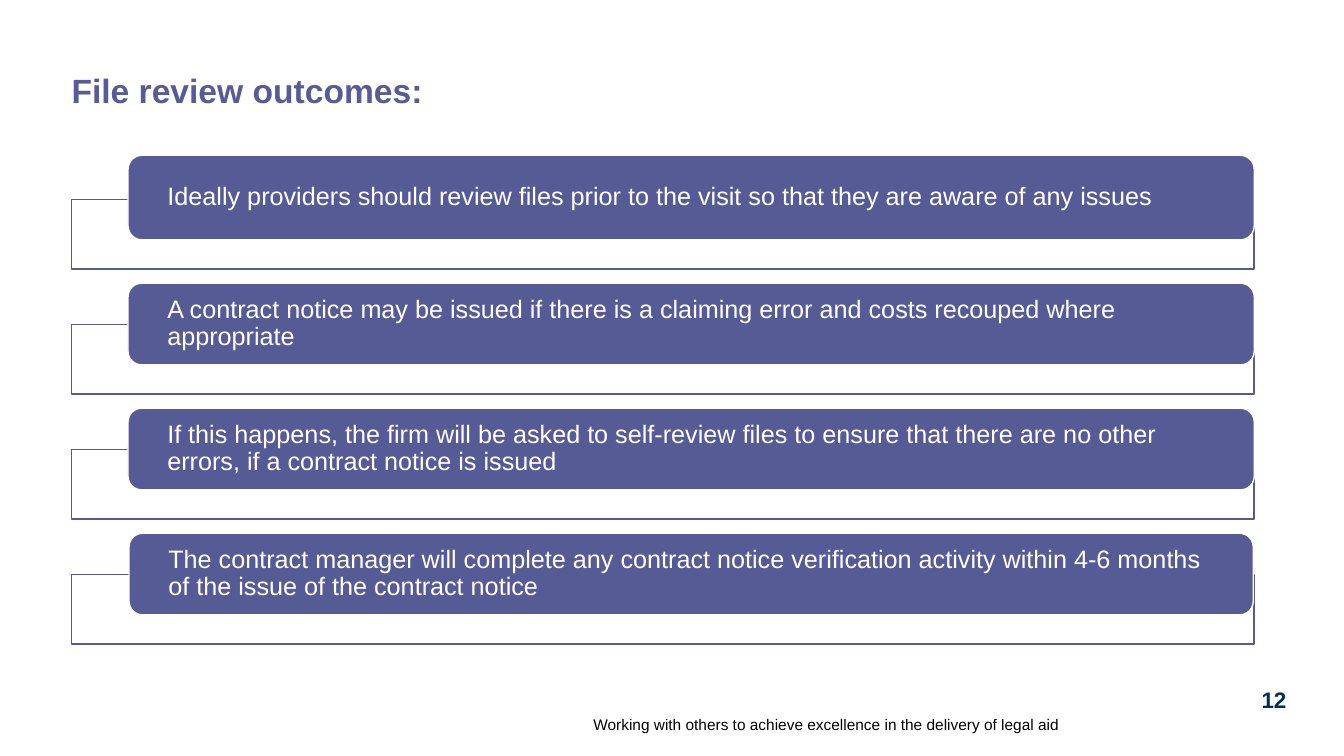
import pptx
import pptx.dml.color
import pptx.enum.shapes
import pptx.enum.text
import pptx.oxml.ns
import pptx.util
from dataclasses import dataclass
from lxml import etree

Inches = pptx.util.Inches
Anchor = pptx.enum.text.MSO_ANCHOR
Align = pptx.enum.text.PP_ALIGN
Preset = pptx.enum.shapes.MSO_SHAPE


@dataclass(frozen=True)
class Theme:
    font: str = "Arial"
    title: str = "575C96"
    bar: str = "565B96"
    white: str = "FFFFFF"
    black: str = "000000"
    navy: str = "003057"
    title_size: int = 24
    body_size: int = 18
    number_size: int = 16
    footer_size: int = 11


THEME = Theme()

# Text, left, top, width and height of each bar
OUTCOMES = [
    ("Ideally providers should review files prior to the visit so that they are "
     "aware of any issues", 1.27, 1.54, 11.17, 0.84),
    ("A contract notice may be issued if there is a claiming error and costs "
     "recouped where appropriate", 1.27, 2.81, 11.17, 0.81),
    ("If this happens, the firm will be asked to self-review files to ensure that "
     "there are no other errors, if a contract notice is issued",
     1.27, 4.05, 11.17, 0.81),
    ("The contract manager will complete any contract notice verification activity "
     "within 4-6 months of the issue of the contract notice",
     1.28, 5.29, 11.15, 0.81),
]
FRAME_TOP, FRAME_STEP = 1.98, 1.24


def rgb(color):
    return pptx.dml.color.RGBColor.from_string(color)


def set_text(shape, text, size, color, bold=False, align=Align.LEFT,
             anchor=Anchor.TOP, inset=0, line_spacing=1.0):
    frame = shape.text_frame
    frame.text = text
    frame.word_wrap = True
    frame.auto_size = pptx.enum.text.MSO_AUTO_SIZE.NONE
    frame.vertical_anchor = anchor
    frame.margin_left = frame.margin_right = Inches(inset)
    frame.margin_top = frame.margin_bottom = 0
    paragraph = frame.paragraphs[0]
    paragraph.alignment = align
    paragraph.line_spacing = line_spacing
    font = paragraph.runs[0].font
    font.name = THEME.font
    font.size = pptx.util.Pt(size)
    font.bold = bold
    font.color.rgb = rgb(color)


def add_title(slide, text):
    title = slide.shapes.title
    title.left, title.top = Inches(0.71), Inches(0.74)
    title.width, title.height = Inches(12.04), Inches(0.38)
    set_text(title, text, THEME.title_size, THEME.title, bold=True, line_spacing=0.9)


def add_label(slide, box, text, size, color, **style):
    label = slide.shapes.add_textbox(*map(Inches, box))
    set_text(label, text, size, color, **style)


def add_block(slide, preset, box, fill, line):
    shape = slide.shapes.add_shape(preset, *map(Inches, box))
    shape.shadow.inherit = False
    shape.fill.solid()
    shape.fill.fore_color.rgb = rgb(fill)
    shape.line.color.rgb = rgb(line)
    shape.line.width = pptx.util.Pt(1)
    return shape


def add_outcome(slide, frame_top, text, bar_box):
    # Outlined frame with a slightly transparent fill
    frame = add_block(slide, Preset.RECTANGLE, (0.71, frame_top, 11.73, 0.69),
                      THEME.white, THEME.bar)
    fill = frame.fill._xPr.find(pptx.oxml.ns.qn("a:solidFill"))
    etree.SubElement(fill[0], pptx.oxml.ns.qn("a:alpha"), val="90000")
    # Rounded bar that holds the text
    bar = add_block(slide, Preset.ROUNDED_RECTANGLE, bar_box, THEME.bar, THEME.white)
    set_text(bar, text, THEME.body_size, THEME.white, anchor=Anchor.MIDDLE,
             inset=0.35, line_spacing=0.9)


def main():
    presentation = pptx.Presentation()
    presentation.slide_width = Inches(13.33)
    presentation.slide_height = Inches(7.5)
    slide = presentation.slides.add_slide(presentation.slide_layouts[5])

    # Title
    add_title(slide, "File review outcomes:")

    # Outcome list
    for index, (text, *bar_box) in enumerate(OUTCOMES):
        add_outcome(slide, FRAME_TOP + index * FRAME_STEP, text, bar_box)

    # Footer and page number
    add_label(slide, (0.57, 6.92, 9.94, 0.36),
              "Working with others to achieve excellence in the delivery of legal aid",
              THEME.footer_size, THEME.black, align=Align.RIGHT, anchor=Anchor.BOTTOM)
    add_label(slide, (12.44, 6.81, 0.39, 0.28), "12", THEME.number_size, THEME.navy,
              bold=True, align=Align.CENTER)

    presentation.save("out.pptx")


if __name__ == "__main__":
    main()
